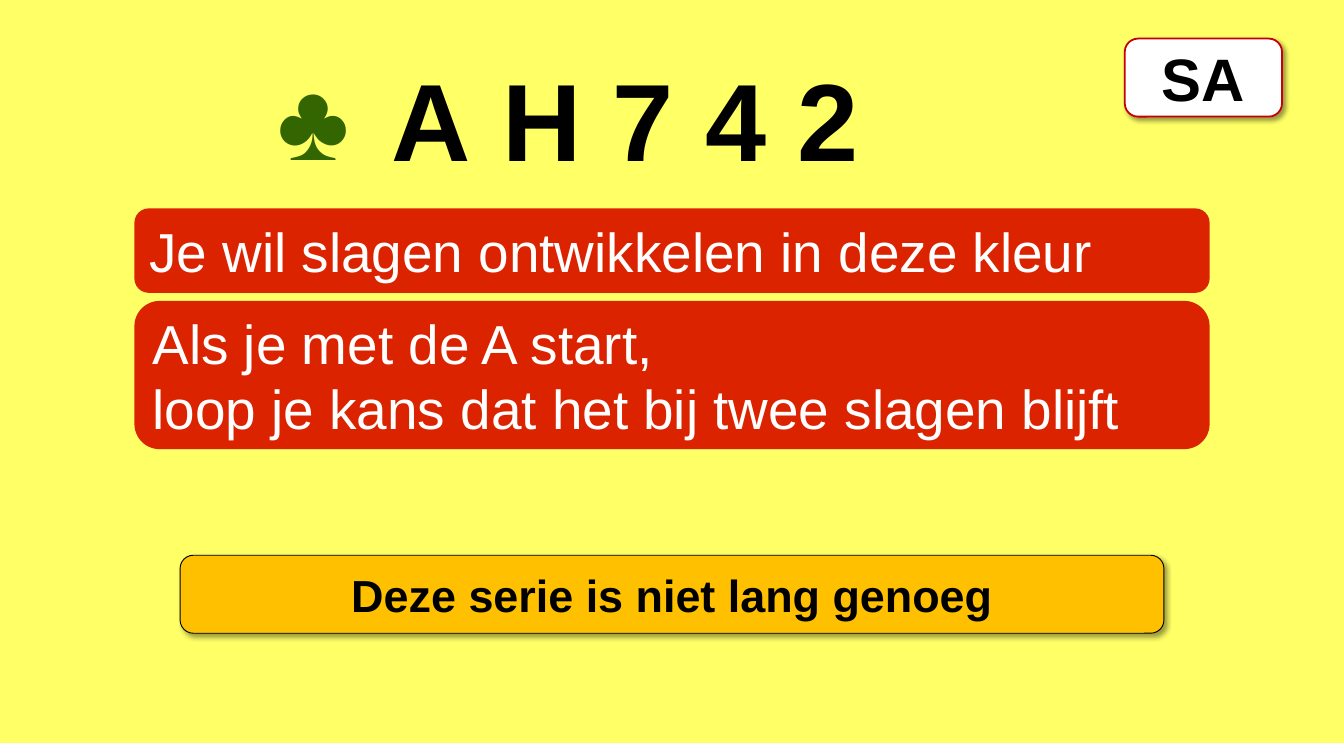
from dataclasses import dataclass

from lxml import etree
from pptx import Presentation
from pptx.dml.color import RGBColor
from pptx.enum.shapes import MSO_SHAPE
from pptx.enum.text import MSO_ANCHOR, MSO_AUTO_SIZE, PP_ALIGN
from pptx.oxml.ns import qn
from pptx.util import Inches, Pt

ROUNDED = MSO_SHAPE.ROUNDED_RECTANGLE
CALLOUT = MSO_SHAPE.ROUNDED_RECTANGULAR_CALLOUT
LEFT, CENTER = PP_ALIGN.LEFT, PP_ALIGN.CENTER
TOP, MIDDLE = MSO_ANCHOR.TOP, MSO_ANCHOR.MIDDLE
GROW = MSO_AUTO_SIZE.SHAPE_TO_FIT_TEXT
BLANK_LAYOUT = 6


@dataclass(frozen=True)
class Theme:
    font: str = "Arial"
    background: str = "FFFF66"
    club: str = "336600"
    statement: str = "DC2300"
    conclusion: str = "FFC000"
    light: str = "FFFFFF"
    dark: str = "000000"
    badge_line: str = "C5000B"
    card_size: int = 88
    badge_size: int = 48
    statement_size: int = 44
    conclusion_size: int = 36
    corner: float = 0.17
    inset_x: float = 0.12
    inset_y: float = 0.06


class SlideBuilder:
    """Places elements on a grid of 100 columns by 100 rows."""

    def __init__(self, presentation, theme):
        self.theme = theme
        self.column = presentation.slide_width / 100
        self.row = presentation.slide_height / 100
        self.slide = presentation.slides.add_slide(presentation.slide_layouts[BLANK_LAYOUT])
        fill = self.slide.background.fill
        fill.solid()
        fill.fore_color.rgb = RGBColor.from_string(theme.background)

    def place(self, left, top, width, height):
        return (round(left * self.column), round(top * self.row),
                round(width * self.column), round(height * self.row))

    def set_text(self, shape, lines, size, color, bold=False, align=LEFT, **frame_format):
        theme = self.theme
        frame = shape.text_frame
        frame_format = {
            "word_wrap": True, "vertical_anchor": MIDDLE,
            "margin_left": Inches(theme.inset_x), "margin_right": Inches(theme.inset_x),
            "margin_top": Inches(theme.inset_y), "margin_bottom": Inches(theme.inset_y),
        } | frame_format
        for name, value in frame_format.items():
            setattr(frame, name, value)
        frame.text = "\n".join(lines)
        for paragraph in frame.paragraphs:
            paragraph.alignment = align
            for run in paragraph.runs:
                for name, value in {"name": theme.font, "size": Pt(size), "bold": bold}.items():
                    setattr(run.font, name, value)
                run.font.color.rgb = RGBColor.from_string(color)

    def card(self, text, box, color, bold=True, wrap=False):
        shape = self.slide.shapes.add_textbox(*self.place(*box))
        self.set_text(shape, [text], self.theme.card_size, color, bold,
                      word_wrap=wrap, vertical_anchor=TOP, auto_size=GROW)

    def panel(self, lines, box, fill, size, color, kind=ROUNDED, adjustments=(),
              line=None, line_width=0.75, shadow=False, **text_format):
        shape = self.slide.shapes.add_shape(kind, *self.place(*box))
        for index, value in enumerate((*adjustments, self.theme.corner)):
            shape.adjustments[index] = value
        shape.fill.solid()
        shape.fill.fore_color.rgb = RGBColor.from_string(fill)
        if line:
            shape.line.color.rgb = RGBColor.from_string(line)
            shape.line.width = Pt(line_width)
        else:
            shape.line.fill.background()
        shape.shadow.inherit = False
        if shadow:
            self.add_shadow(shape)
        self.set_text(shape, lines, size, color, **text_format)

    def add_shadow(self, shape):
        effects = shape.element.spPr.find(qn("a:effectLst"))
        outer = etree.SubElement(effects, qn("a:outerShdw"), blurRad=str(Pt(4)),
                                 dist=str(Pt(3)), dir=str(45 * 60000),
                                 algn="tl", rotWithShape="0")
        color = etree.SubElement(outer, qn("a:srgbClr"), val=self.theme.dark)
        etree.SubElement(color, qn("a:alpha"), val="40000")


def main():
    theme = Theme()
    presentation = Presentation()
    presentation.slide_width = Inches(14.96)
    presentation.slide_height = Inches(8.27)
    builder = SlideBuilder(presentation, theme)

    # Suit symbol, then the cards side by side with equal gaps
    builder.card("♣", (19.85, 6.17, 6.82, 19.47), theme.club, bold=False, wrap=True)
    left, gap, letter_width, digit_width = 28.34, 0.67, 7.55, 6.22
    for card in "AH742":
        width = digit_width if card.isdigit() else letter_width
        builder.card(card, (left, 6.29, width, 19.35), theme.dark)
        left += width + gap

    # Statements
    statements = [
        (28.05, 11.37, ["Je wil slagen ontwikkelen in deze kleur"]),
        (40.5, 19.95, ["Als je met de A start,",
                       "loop je kans dat het bij twee slagen blijft"]),
    ]
    for top, height, lines in statements:
        builder.panel(lines, (10, top, 80, height), theme.statement,
                      theme.statement_size, theme.light)

    # Conclusion and contract badge
    raised = {"shadow": True, "bold": True, "align": CENTER}
    builder.panel(["Deze serie is niet lang genoeg"], (13.4, 74.73, 73.2, 10.5),
                  theme.conclusion, theme.conclusion_size, theme.dark, kind=CALLOUT,
                  adjustments=(-0.5, -0.29), line=theme.dark, **raised)
    builder.panel(["SA"], (83.69, 5.2, 11.7, 10.5), theme.light, theme.badge_size,
                  theme.dark, line=theme.badge_line, line_width=1.42, **raised)

    presentation.save("out.pptx")


if __name__ == "__main__":
    main()
